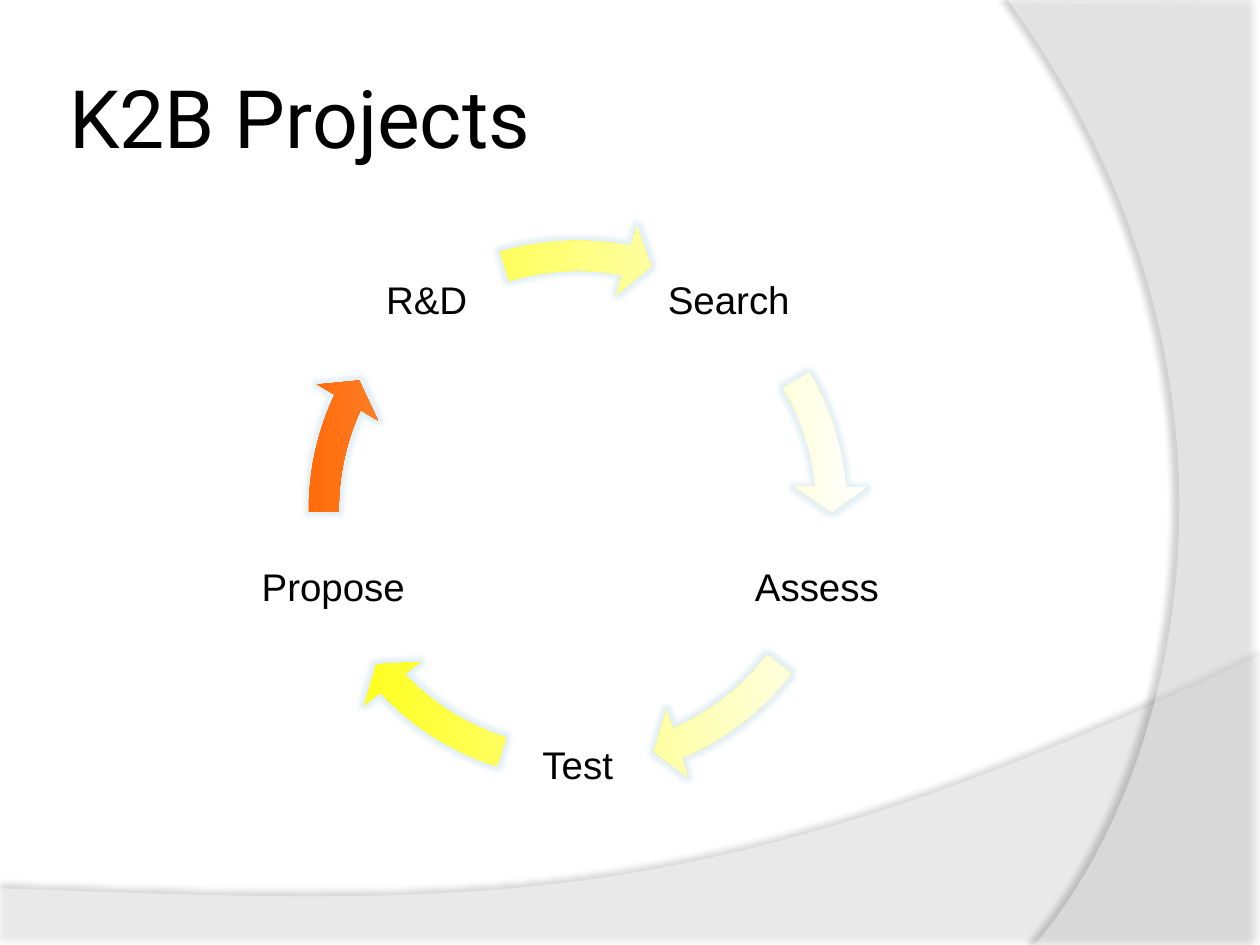
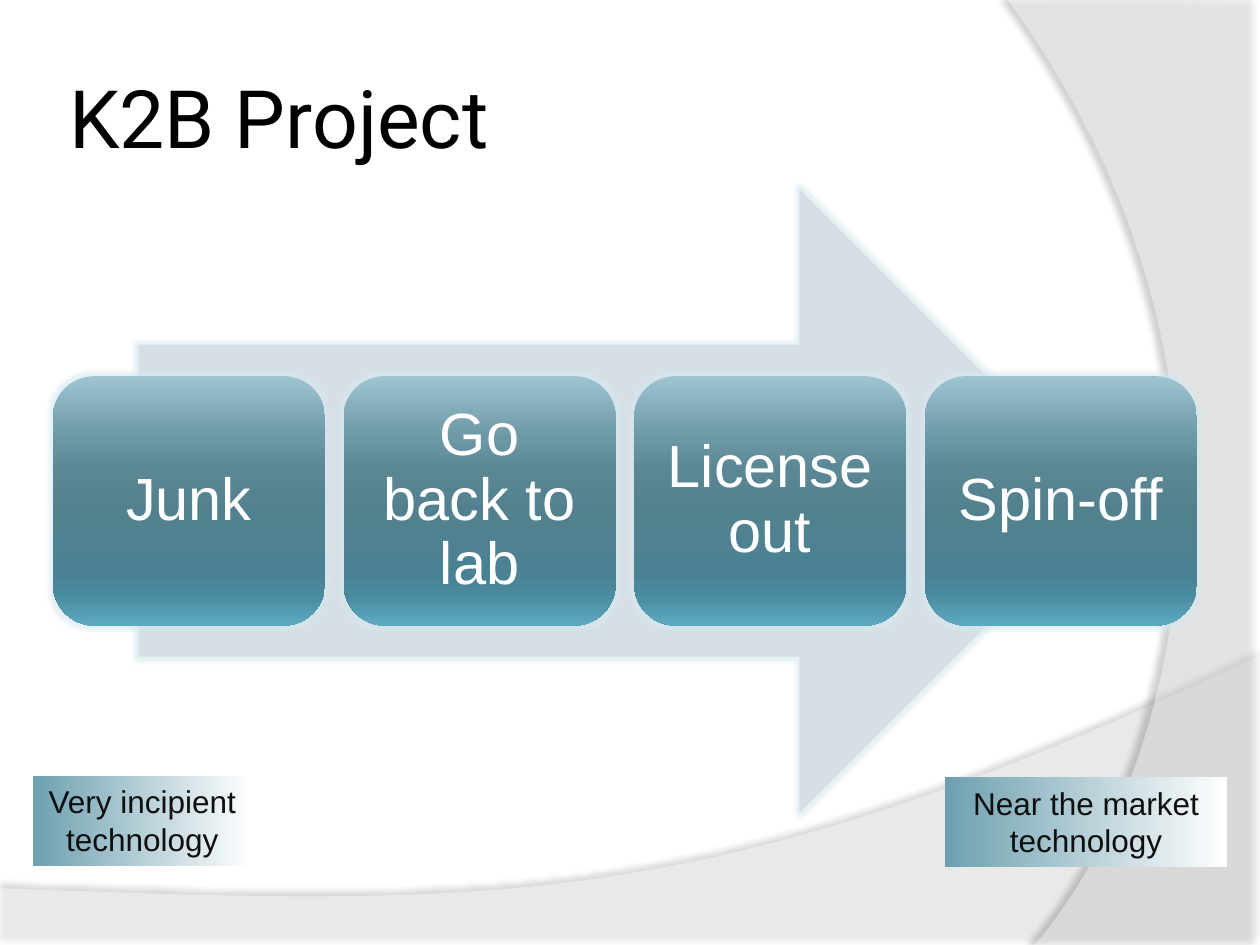
import math

from lxml import etree
from pptx import Presentation
from pptx import util as u
from pptx.dml import color as dml
from pptx.enum import shapes, text
from pptx.oxml import ns

COLORS = {
    "black": "000000", "white": "FFFFFF", "ink": "0F0F0F", "yellow": "FFFF00",
    "orange": "FF6600", "pale": "D5DFE4", "teal": "6EA0B0", "halo": "D5E8F0",
}
GLOSS = [(0, "9EC4D2"), (25, "6C97A5"), (38, "5B8694"), (55, "51808F"),
         (80, "4A8294"), (88, "4A8BA0"), (100, "5DAAC2")]
TITLE_FONT, BODY_FONT = "Roboto", "Arial"
TITLE_BOX = (0.5, 0.3, 8.17, 1.25)
CYCLE_BOX = (2.29, 1.75, 4.59, 4.59)
PROCESS_BOX = (0.42, 1.5, 9.08, 4.95)
STEPS = [
    ("Search", "yellow", 329.42, 354.91),
    ("Assess ", "yellow", 37.54, 66.94),
    ("Test", "yellow", 107.47, 136.87),
    ("Propose", "orange", 179.5, 204.99),
    ("R&D", "yellow", 253.29, 281.12),
]
OUTCOMES = ["Junk", "Go back to lab", "License out", "Spin-off"]
CAPTIONS = [("Very incipient technology", (0.26, 6.16, 1.74, 0.71)),
            ("Near the market technology", (7.5, 6.17, 2.24, 0.71))]


def rgb(name):
    """Return the palette colour with this name."""
    return dml.RGBColor.from_string(COLORS[name])


def inches(box):
    """Convert a sequence of numbers to lengths."""
    return [u.Inches(value) for value in box]


def add_child(parent, tag, **attributes):
    """Append a drawing element with the given attributes."""
    values = {key: str(value) for key, value in attributes.items()}
    return etree.SubElement(parent, ns.qn(tag), values)


def add_effect(shape, tag, hex_color, opacity, **attributes):
    """Give a shape a glow or an outer shadow."""
    effects = shape.element.spPr.find(ns.qn("a:effectLst"))
    effect = add_child(effects, tag, **attributes)
    tint = add_child(effect, "a:srgbClr", val=hex_color)
    add_child(tint, "a:alpha", val=opacity * 1000)


def fill_gradient(shape, stops, angle=0):
    """Fill a shape with a linear gradient of (percent, hex) stops."""
    shape.fill.gradient()
    shape.fill.gradient_angle = angle
    stop_list = shape.element.spPr.find(".//" + ns.qn("a:gsLst"))
    stop_list.clear()
    for percent, hex_color in stops:
        stop = add_child(stop_list, "a:gs", pos=percent * 1000)
        add_child(stop, "a:srgbClr", val=hex_color)


def add_plain(page, kind, box, halo=False):
    """Add a preset shape without line or shadow, with an optional halo."""
    shape = page.shapes.add_shape(kind, *inches(box))
    shape.line.fill.background()
    shape.shadow.inherit = False
    if halo:
        add_effect(shape, "a:glow", COLORS["halo"], 60, rad=u.Pt(5))
    return shape


def write(shape, words, size, color, font=BODY_FONT, align=text.PP_ALIGN.CENTER,
          margin=None, anchor=text.MSO_ANCHOR.MIDDLE, spacing=None):
    """Set the one paragraph of a shape and its format."""
    frame = shape.text_frame
    frame.word_wrap = True
    frame.vertical_anchor = anchor
    if margin is not None:
        frame.margin_left = frame.margin_right = u.Inches(margin)
        frame.margin_top = frame.margin_bottom = u.Inches(margin)
    para = frame.paragraphs[0]
    para.text = words
    para.alignment = align
    para.line_spacing = spacing
    para.font.size = u.Pt(size)
    para.font.name = font
    para.font.color.rgb = rgb(color)


def bezier(points, steps=40):
    """Return points along a cubic curve, after its start."""
    curve = []
    for step in range(1, steps + 1):
        t = step / steps
        weights = ((1 - t) ** 3, 3 * t * (1 - t) ** 2, 3 * t * t * (1 - t), t ** 3)
        curve.append(tuple(sum(w * p[axis] for w, p in zip(weights, points))
                           for axis in (0, 1)))
    return curve


def add_wave(page, outline, opacity, shade, distance, direction):
    """Move a translucent wave with a soft shadow to the slide master."""
    builder = page.shapes.build_freeform(*inches(outline[0]))
    builder.add_line_segments([inches(point) for point in outline[1:]], close=True)
    wave = builder.convert_to_shape()
    wave.fill.solid()
    wave.fill.fore_color.rgb = rgb("white")
    tint = wave.element.spPr.find(".//" + ns.qn("a:srgbClr"))
    add_child(tint, "a:alpha", val=opacity * 1000)
    wave.line.fill.background()
    wave.shadow.inherit = False
    add_effect(wave, "a:outerShdw", COLORS["black"], shade, blurRad=u.Pt(4),
               dist=u.Pt(distance), dir=direction * 60000, algn="ctr", rotWithShape=0)
    return wave


def decorate_master(deck, page):
    """Put the bottom and right waves behind every slide."""
    bottom = [(0, 7.05), (0, 7.51), (10, 7.51), (10, 5.2)]
    bottom += bezier([(10, 5.2), (5.59, 7.29), (3.91, 7.19), (0, 7.05)])
    right = [(10, 0.02), (10, 7.5), (8.21, 7.5)]
    right += bezier([(8.21, 7.5), (9.35, 6.19), (10.18, 3), (8, 0)])
    waves = [add_wave(page, bottom, 45, 35, 3.5, 270),
             add_wave(page, right, 40, 45, 4, 180)]
    tree = deck.slide_master.element.cSld.spTree
    for position, wave in enumerate(waves, start=2):
        tree.insert(position, wave.element)


def add_page(deck, title):
    """Add a slide with its title."""
    page = deck.slides.add_slide(deck.slide_layouts[5])
    holder = page.shapes.title
    holder.left, holder.top, holder.width, holder.height = inches(TITLE_BOX)
    write(holder, title, 46, "black", TITLE_FONT, text.PP_ALIGN.LEFT, 0.05)
    return page


def add_cycle(page, box):
    """Draw the ring of steps joined by curved arrows."""
    left, top, width, height = box
    radius, label_size = 2.04, 1.22
    for index, (label, color, start, end) in enumerate(STEPS):
        angle = math.radians(-54 + index * 360 / len(STEPS))
        x = left + width / 2 + radius * math.cos(angle) - label_size / 2
        y = top + height / 2 + radius * math.sin(angle) - label_size / 2
        label_box = page.shapes.add_textbox(*inches((x, y, label_size, label_size)))
        write(label_box, label, 22, "black", margin=0.03, spacing=0.9)
        arrow = add_plain(page, shapes.MSO_SHAPE.CIRCULAR_ARROW, box, halo=True)
        settings = (0.052, 5.59 * 0.6, end * 0.6, start * 0.6, 0.061)
        for number, value in enumerate(settings):
            arrow.adjustments[number] = value
        fill_gradient(arrow, [(0, COLORS[color]), (100, COLORS["white"])])


def add_process(page, box):
    """Draw the outcomes in a row over a wide arrow."""
    left, top, width, height = box
    inset, card_width = 0.075 * width, 2.16
    arrow = add_plain(page, shapes.MSO_SHAPE.RIGHT_ARROW,
                      (left + inset, top, width - 2 * inset, height), halo=True)
    arrow.fill.solid()
    arrow.fill.fore_color.rgb = rgb("pale")
    step = (width - card_width) / (len(OUTCOMES) - 1)
    for index, outcome in enumerate(OUTCOMES):
        card = add_plain(page, shapes.MSO_SHAPE.ROUNDED_RECTANGLE,
                         (left + index * step, top + 0.3 * height,
                          card_width, 0.4 * height), halo=True)
        fill_gradient(card, GLOSS, 270)
        write(card, outcome, 34, "white", margin=0.14, spacing=0.9)


def add_caption(page, words, box):
    """Add a fading caption box."""
    caption = add_plain(page, shapes.MSO_SHAPE.RECTANGLE, box)
    fill_gradient(caption, [(0, COLORS["teal"]), (100, COLORS["white"])])
    write(caption, words, 18, "ink", anchor=text.MSO_ANCHOR.TOP)
    caption.text_frame.auto_size = text.MSO_AUTO_SIZE.SHAPE_TO_FIT_TEXT


def main():
    """Build and save the deck."""
    deck = Presentation()
    deck.slide_width, deck.slide_height = u.Inches(10), u.Inches(7.5)
    cycle_page = add_page(deck, "K2B Projects")
    decorate_master(deck, cycle_page)
    add_cycle(cycle_page, CYCLE_BOX)
    process_page = add_page(deck, "K2B Project")
    add_process(process_page, PROCESS_BOX)
    for words, box in CAPTIONS:
        add_caption(process_page, words, box)
    deck.save("out.pptx")


if __name__ == "__main__":
    main()
